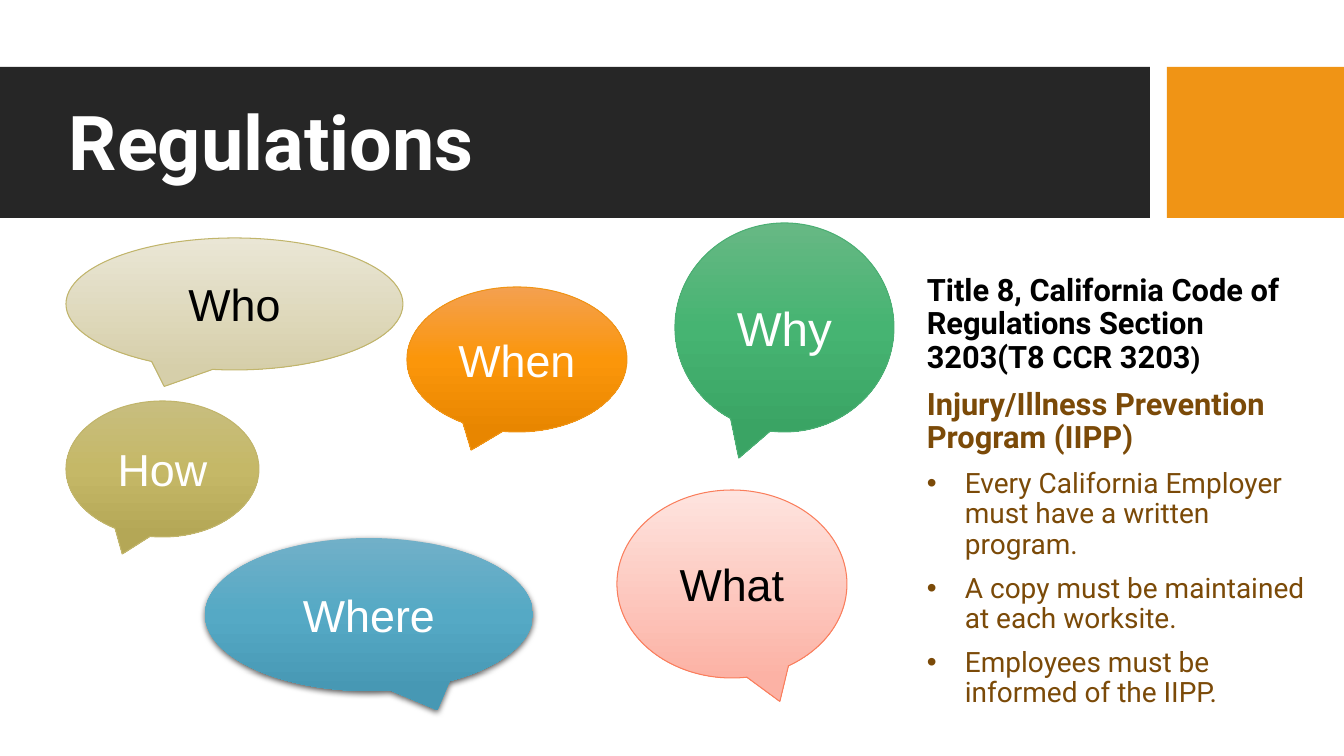
from pptx import Presentation
from pptx.dml.color import RGBColor
from pptx.enum.shapes import MSO_SHAPE as Shape
from pptx.enum.text import MSO_ANCHOR as Anchor, PP_ALIGN as Align
from pptx.oxml import parse_xml
from pptx.oxml.ns import nsdecls, qn
from pptx.util import Emu, Pt
from copy import deepcopy

PX = 12192000 / 1344  # EMU in one px
WHITE = RGBColor(0xFF, 0xFF, 0xFF)
BLACK = RGBColor(0x00, 0x00, 0x00)
CHARCOAL = RGBColor(0x26, 0x26, 0x26)
ORANGE = RGBColor(0xF0, 0x94, 0x15)
BROWN = RGBColor(0x7B, 0x4A, 0x08)
KHAKI = RGBColor(0xC1, 0xB5, 0x6B)
CORAL = RGBColor(0xFA, 0x7E, 0x5C)
GREEN = RGBColor(0x4B, 0xAF, 0x73)

# Gradients, from top to bottom
SAND_FADE = [RGBColor(0xEA, 0xE6, 0xD5), RGBColor(0xD6, 0xCF, 0xAA)]
PINK_FADE = [RGBColor(0xFE, 0xE4, 0xDF), RGBColor(0xFC, 0xB2, 0xA5)]
BLUE_FADE = [RGBColor(0x71, 0xB0, 0xC8), RGBColor(0x55, 0xA9, 0xC5), RGBColor(0x47, 0x98, 0xB4)]
ORANGE_FADE = [RGBColor(0xF4, 0xA0, 0x50), RGBColor(0xFB, 0x96, 0x0A), RGBColor(0xE8, 0x86, 0x00)]
GREEN_FADE = [RGBColor(0x67, 0xB8, 0x84), RGBColor(0x46, 0xB4, 0x72), RGBColor(0x3A, 0xA4, 0x64)]
KHAKI_FADE = [RGBColor(0xC8, 0xBE, 0x7F), RGBColor(0xC5, 0xB8, 0x67), RGBColor(0xB4, 0xA7, 0x56)]


class SlideBuilder:
    heading_font = "Roboto"
    bubble_font = "Arial"

    def __init__(self, deck):
        self.slide = deck.slides.add_slide(deck.slide_layouts[6])

    def place(self, *lengths):
        return [Emu(round(length * PX)) for length in lengths]

    def add_span(self, para, text, font, size, color, bold=False):
        span = para.add_run()
        span.text = text
        for name, value in {"name": font, "size": Pt(size), "bold": bold}.items():
            setattr(span.font, name, value)
        span.font.color.rgb = color

    def band(self, area, color):
        band = self.slide.shapes.add_shape(Shape.RECTANGLE, *self.place(*area))
        band.shadow.inherit = False
        band.fill.solid()
        band.fill.fore_color.rgb = color
        band.line.fill.background()

    def text(self, area, paragraphs):
        """Each paragraph is (bulleted, [(text, size, color, bold), ...])."""
        frame = self.slide.shapes.add_textbox(*self.place(*area)).text_frame
        frame.word_wrap = True
        frame.vertical_anchor = Anchor.MIDDLE
        for index, (bulleted, spans) in enumerate(paragraphs):
            para = frame.add_paragraph() if index else frame.paragraphs[0]
            if bulleted:
                self.bullet(para)
            para.line_spacing = 0.9
            para.space_before = Pt(10 if index else 0)
            for text, size, color, bold in spans:
                self.add_span(para, text, self.heading_font, size, color, bold)

    def bullet(self, para):
        indent = self.place(38)[0]
        properties = para._p.get_or_add_pPr()
        properties.set("marL", str(indent))
        properties.set("indent", str(-indent))
        properties.append(parse_xml(f'<a:buFont {nsdecls("a")} typeface="Arial"/>'))
        properties.append(parse_xml(f'<a:buChar {nsdecls("a")} char="•"/>'))

    def bubble(self, area, text, fade, outline, color=WHITE, size=32, flip=False, shadow=False):
        bubble = self.slide.shapes.add_shape(Shape.OVAL_CALLOUT, *self.place(*area))
        bubble.shadow.inherit = False
        self.fade(bubble, fade)
        if outline is None:
            bubble.line.fill.background()
        else:
            bubble.line.color.rgb = outline
            bubble.line.width = Pt(0.75)
        properties = bubble._element.spPr
        if flip:
            properties.find(qn("a:xfrm")).set("flipH", "1")
        if shadow:
            properties.find(qn("a:effectLst")).append(parse_xml(
                f'<a:outerShdw {nsdecls("a")} blurRad="{Pt(4.5)}" dist="{Pt(1.5)}" '
                'dir="5400000" algn="ctr" rotWithShape="0">'
                '<a:srgbClr val="000000"><a:alpha val="63000"/></a:srgbClr></a:outerShdw>'))
        frame = bubble.text_frame
        frame.vertical_anchor = Anchor.MIDDLE
        para = frame.paragraphs[0]
        para.alignment = Align.CENTER
        self.add_span(para, text, self.bubble_font, size, color)

    def fade(self, shape, colors):
        shape.fill.gradient()
        shape.fill.gradient_angle = 270
        stop_list = shape._element.spPr.find(".//" + qn("a:gsLst"))
        while len(stop_list) < len(colors):
            stop_list.append(deepcopy(stop_list[-1]))
        for index, (stop, color) in enumerate(zip(shape.fill.gradient_stops, colors)):
            stop.position = index / (len(colors) - 1)
            stop.color.rgb = color


def main():
    deck = Presentation()
    deck.slide_width, deck.slide_height = Emu(round(1344 * PX)), Emu(round(756 * PX))
    page = SlideBuilder(deck)

    # Header
    page.band((0, 67, 1150, 151), CHARCOAL)
    page.band((1167, 67, 177, 151), ORANGE)
    page.text((59, 108, 519, 77), [(False, [("Regulations", 54, WHITE, True)])])

    # Regulation summary
    duties = [
        "Every California Employer must have a written program.",
        "A copy must be maintained at each worksite.",
        "Employees must be informed of the IIPP.",
    ]
    citation = "Title 8, California Code of Regulations Section 3203(T8 CCR 3203"
    page.text((917, 238, 414, 508), [
        (False, [(citation, 22, BLACK, True), (")", 20, BLACK, True)]),
        (False, [("Injury/Illness Prevention Program (IIPP)", 22, BROWN, True)]),
        *[(True, [(duty, 20, BROWN, False)]) for duty in duties],
    ])

    # Question bubbles
    page.bubble((66, 238, 337, 132), "Who", SAND_FADE, KHAKI, color=BLACK)
    page.bubble((617, 490, 230, 188), "What", PINK_FADE, CORAL, color=BLACK, flip=True)
    page.bubble((205, 538, 328, 153), "Where", BLUE_FADE, None, flip=True, shadow=True)
    page.bubble((407, 287, 220, 145), "When", ORANGE_FADE, ORANGE)
    page.bubble((675, 223, 219, 209), "Why", GREEN_FADE, GREEN, size=34)
    page.bubble((66, 401, 193, 136), "How", KHAKI_FADE, KHAKI)

    deck.save("out.pptx")


if __name__ == "__main__":
    main()
